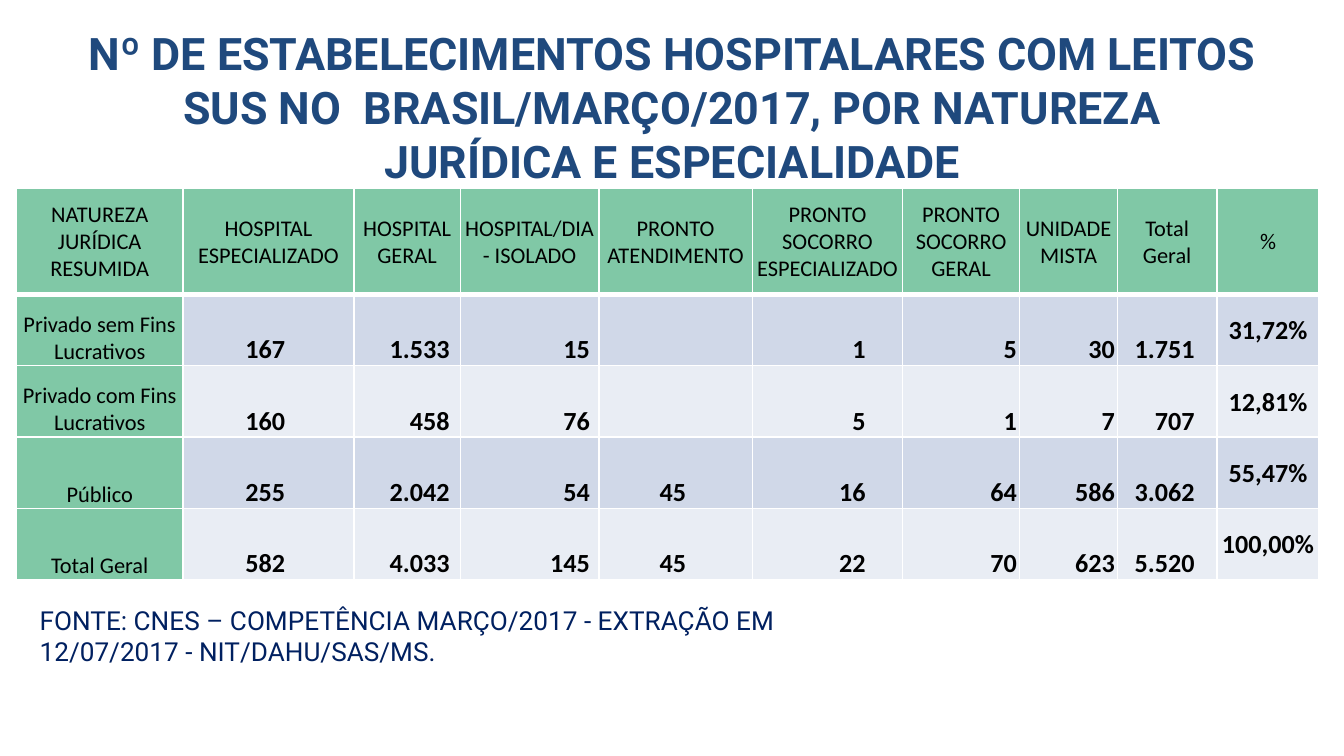
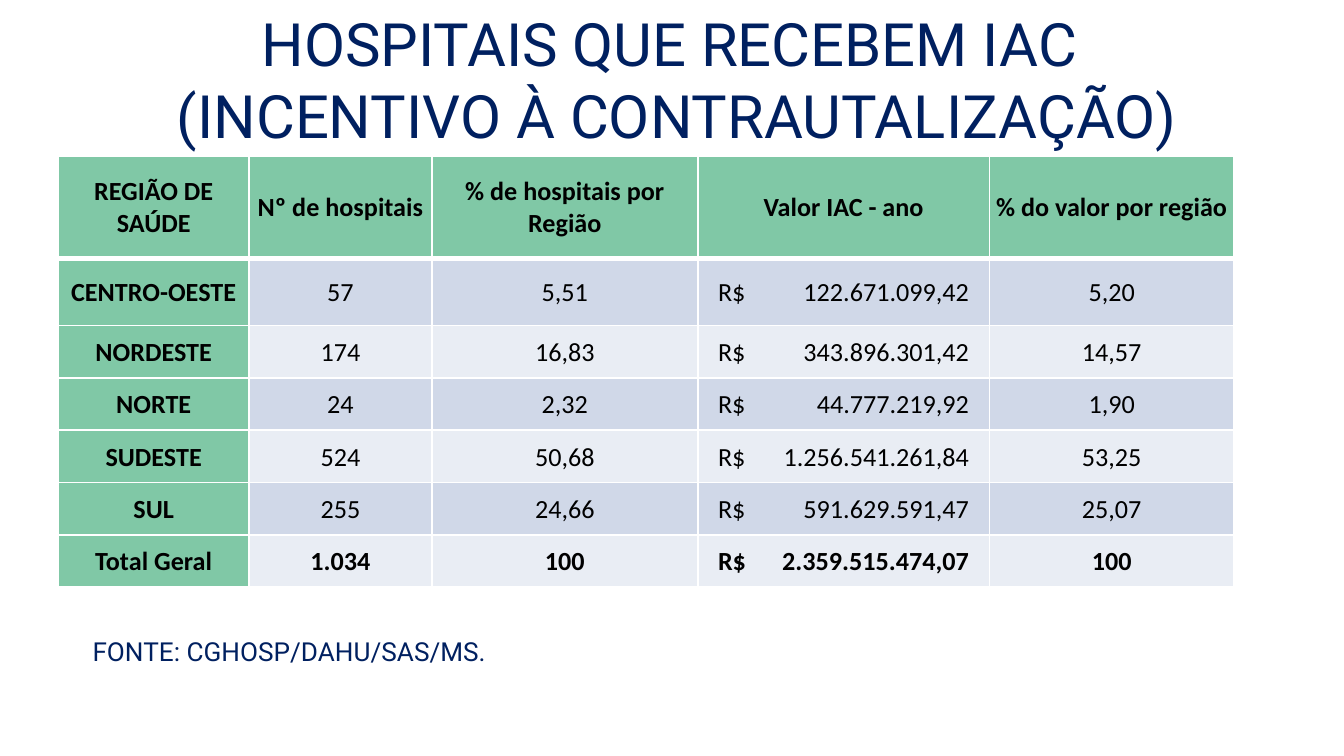
from lxml import etree
from pptx import Presentation
from pptx.dml.color import RGBColor
from pptx.enum import text
from pptx.oxml import ns
from pptx.util import Cm, Pt

NAVY = RGBColor(0x00, 0x20, 0x60)
BLUE = RGBColor(0x1F, 0x49, 0x7D)
BLACK = RGBColor(0x00, 0x00, 0x00)
WHITE = RGBColor(0xFF, 0xFF, 0xFF)
GREEN = RGBColor(0x80, 0xC8, 0xA6)
BANDS = (RGBColor(0xD0, 0xD8, 0xE8), RGBColor(0xE9, 0xED, 0xF4))

HEADING_FONT = "Roboto"
TABLE_FONT = "Calibri"
CENTER, LEFT, RIGHT = text.PP_ALIGN.CENTER, text.PP_ALIGN.LEFT, text.PP_ALIGN.RIGHT
TOP, MIDDLE, BOTTOM = (text.MSO_ANCHOR.TOP, text.MSO_ANCHOR.MIDDLE,
                       text.MSO_ANCHOR.BOTTOM)
CELL_INSET = 0.03
CURRENCY_INSET = 0.38

# Widths in cm, then the space right of each figure (None centres the column)
FACILITY_WIDTHS = (3.15, 3.23, 2.01, 2.62, 2.9, 2.84, 2.21, 1.85, 1.88, 1.93)
FACILITY_GAPS = (None, 1.3, 0.2, 0.17, 1.25, 0.7, 0.05, 0.05, 0.42, None)
FACILITY_ROWS = (
    ("NATUREZA JURÍDICA RESUMIDA", "HOSPITAL ESPECIALIZADO", "HOSPITAL GERAL",
     "HOSPITAL/DIA - ISOLADO", "PRONTO ATENDIMENTO",
     "PRONTO SOCORRO ESPECIALIZADO", "PRONTO SOCORRO GERAL", "UNIDADE MISTA",
     "Total Geral", "%"),
    ("Privado sem Fins Lucrativos", "167", "1.533", "15", "", "1", "5", "30",
     "1.751", "31,72%"),
    ("Privado com Fins Lucrativos", "160", "458", "76", "", "5", "1", "7",
     "707", "12,81%"),
    ("Público", "255", "2.042", "54", "45", "16", "64", "586", "3.062", "55,47%"),
    ("Total Geral", "582", "4.033", "145", "45", "22", "70", "623", "5.520",
     "100,00%"),
)

INCENTIVE_WIDTHS = (3.61, 3.45, 5.03, 5.51, 4.62)
INCENTIVE_ROWS = (
    ("REGIÃO DE SAÚDE", "Nº de hospitais", "% de hospitais por Região",
     "Valor IAC - ano", "% do valor por região"),
    ("CENTRO-OESTE", "57", "5,51", "R$\t122.671.099,42", "5,20"),
    ("NORDESTE", "174", "16,83", "R$\t343.896.301,42", "14,57"),
    ("NORTE", "24", "2,32", "R$\t44.777.219,92", "1,90"),
    ("SUDESTE", "524", "50,68", "R$\t1.256.541.261,84", "53,25"),
    ("SUL", "255", "24,66", "R$\t591.629.591,47", "25,07"),
    ("Total Geral", "1.034", "100", "R$\t2.359.515.474,07", "100"),
)


def style_text(frame, font_name, size, color, bold=False, align=LEFT):
    for paragraph in frame.paragraphs:
        paragraph.alignment = align
        for run in paragraph.runs:
            run.font.name = font_name
            run.font.size = Pt(size)
            run.font.bold = bold
            run.font.color.rgb = color


def fit_frame(frame, anchor):
    frame.word_wrap = True
    frame.auto_size = text.MSO_AUTO_SIZE.NONE
    frame.vertical_anchor = anchor


def add_title_slide(deck, wording, box, size, color, bold=False):
    slide = deck.slides.add_slide(deck.slide_layouts[5])
    title = slide.shapes.title
    title.left, title.top, title.width, title.height = map(Cm, box)
    title.text_frame.text = wording
    fit_frame(title.text_frame, TOP)
    style_text(title.text_frame, HEADING_FONT, size, color, bold, CENTER)
    return slide


def add_source_note(slide, wording, left):
    note = slide.shapes.add_textbox(Cm(left), Cm(11.73), Cm(15.4), Cm(1))
    note.text_frame.text = wording
    fit_frame(note.text_frame, BOTTOM)
    style_text(note.text_frame, HEADING_FONT, 14, NAVY)


def add_borders(cell, bottom_points):
    """Draw white cell borders; they must precede the fill in the cell."""
    properties = cell._tc.get_or_add_tcPr()
    for index, (side, points) in enumerate(
            (("L", 1), ("R", 1), ("T", 1), ("B", bottom_points))):
        line = etree.Element(ns.qn(f"a:ln{side}"), w=str(Pt(points)))
        fill = etree.SubElement(line, ns.qn("a:solidFill"))
        etree.SubElement(fill, ns.qn("a:srgbClr"), val=str(WHITE))
        properties.insert(index, line)


def add_grid(slide, left, top, widths, heights, rows):
    """Place a table with green headings and banded rows."""
    grid = slide.shapes.add_table(len(rows), len(widths), Cm(left), Cm(top),
                                  Cm(sum(widths)), Cm(sum(heights))).table
    for column, width in zip(grid.columns, widths):
        column.width = Cm(width)
    for r, (row, height) in enumerate(zip(rows, heights)):
        grid.rows[r].height = Cm(height)
        for c, wording in enumerate(row):
            cell = grid.cell(r, c)
            cell.text_frame.text = wording
            cell.margin_left = cell.margin_right = cell.margin_top = Cm(CELL_INSET)
            cell.margin_bottom = 0
            cell.vertical_anchor = MIDDLE
            cell.fill.solid()
            heading = r == 0 or c == 0
            cell.fill.fore_color.rgb = GREEN if heading else BANDS[(r - 1) % 2]
            add_borders(cell, 3 if r == 0 else 1)
    return grid


def style_facility_cells(grid):
    for r, row in enumerate(FACILITY_ROWS):
        for c, gap in enumerate(FACILITY_GAPS):
            cell = grid.cell(r, c)
            heading = r == 0 or c == 0
            figure = not heading and gap is not None
            if figure:
                cell.margin_right = Cm(gap)
            if r > 0 and (c == 0 or figure):
                cell.vertical_anchor = BOTTOM
            style_text(cell.text_frame, TABLE_FONT, 12 if heading else 14, BLACK,
                       not heading, RIGHT if figure else CENTER)


def spread_currency(cell, width):
    """Keep the symbol at the left and the amount at a right tab stop."""
    cell.margin_left = Cm(CURRENCY_INSET)
    properties = cell.text_frame.paragraphs[0]._p.get_or_add_pPr()
    stops = etree.SubElement(properties, ns.qn("a:tabLst"))
    etree.SubElement(stops, ns.qn("a:tab"),
                     pos=str(Cm(width - 2 * CURRENCY_INSET)), algn="r")


def style_incentive_cells(grid):
    last = len(INCENTIVE_ROWS) - 1
    for r, row in enumerate(INCENTIVE_ROWS):
        for c, wording in enumerate(row):
            cell = grid.cell(r, c)
            currency = "\t" in wording
            if currency:
                spread_currency(cell, INCENTIVE_WIDTHS[c])
            style_text(cell.text_frame, TABLE_FONT, 14, BLACK,
                       c == 0 or r in (0, last), LEFT if currency else CENTER)


def add_facilities_slide(deck):
    slide = add_title_slide(
        deck, "Nº DE ESTABELECIMENTOS HOSPITALARES COM LEITOS SUS NO  "
        "BRASIL/MARÇO/2017, POR NATUREZA JURÍDICA E ESPECIALIDADE",
        (1.3, 0.36, 22.8, 2.6), 24, BLUE, bold=True)
    add_source_note(slide, "FONTE: CNES – COMPETÊNCIA MARÇO/2017 - EXTRAÇÃO EM "
                    "12/07/2017 - NIT/DAHU/SAS/MS.", 0.5)
    heights = [2] + [1.35] * 4
    style_facility_cells(add_grid(slide, 0.31, 3.56, FACILITY_WIDTHS, heights,
                                  FACILITY_ROWS))


def add_incentive_slide(deck):
    slide = add_title_slide(
        deck, "HOSPITAIS QUE RECEBEM IAC \v(INCENTIVO À CONTRAUTALIZAÇÃO)",
        (1.1, 0, 23.4, 1.8), 32, NAVY)
    heights = [1.93, 1.27] + [0.99] * 5
    style_incentive_cells(add_grid(slide, 1.1, 2.95, INCENTIVE_WIDTHS, heights,
                                   INCENTIVE_ROWS))
    add_source_note(slide, "FONTE: CGHOSP/DAHU/SAS/MS.", 1.5)


def main():
    deck = Presentation()
    deck.slide_width, deck.slide_height = Cm(25.4), Cm(14.29)
    add_facilities_slide(deck)
    add_incentive_slide(deck)
    deck.save("out.pptx")


if __name__ == "__main__":
    main()
